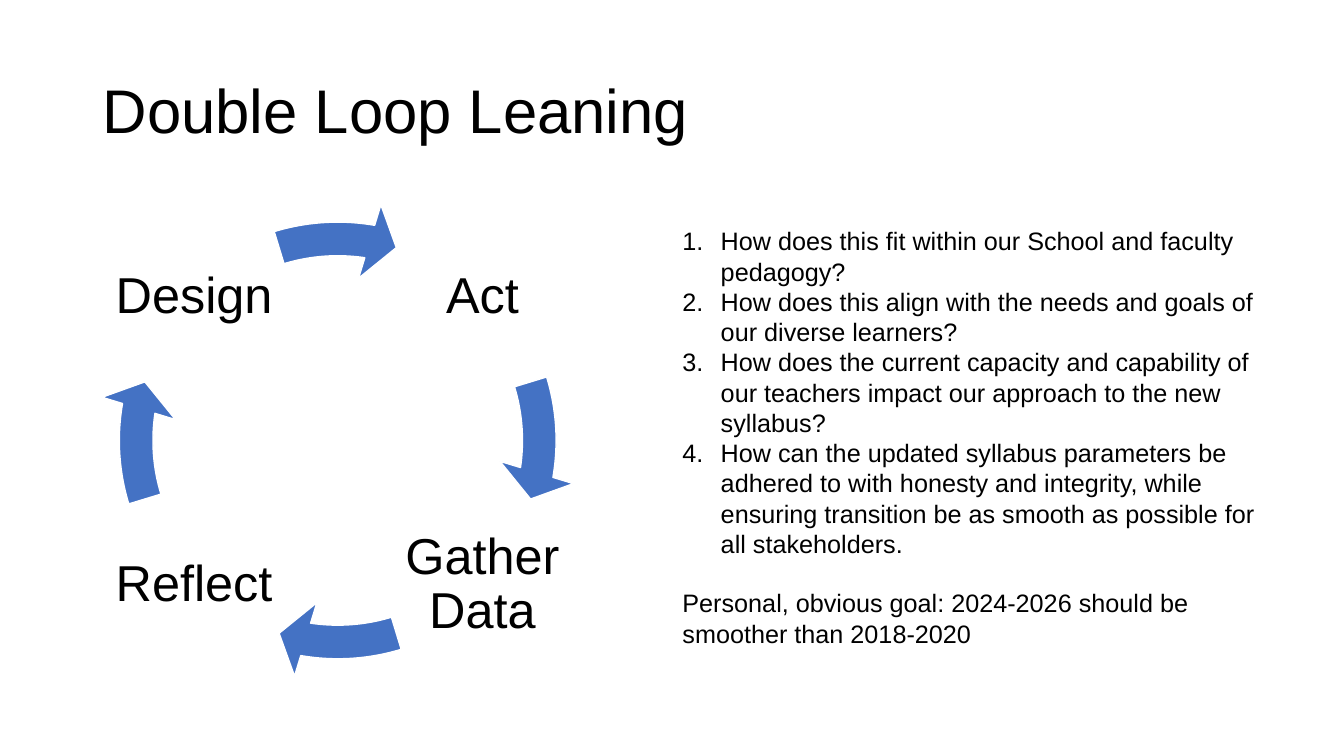
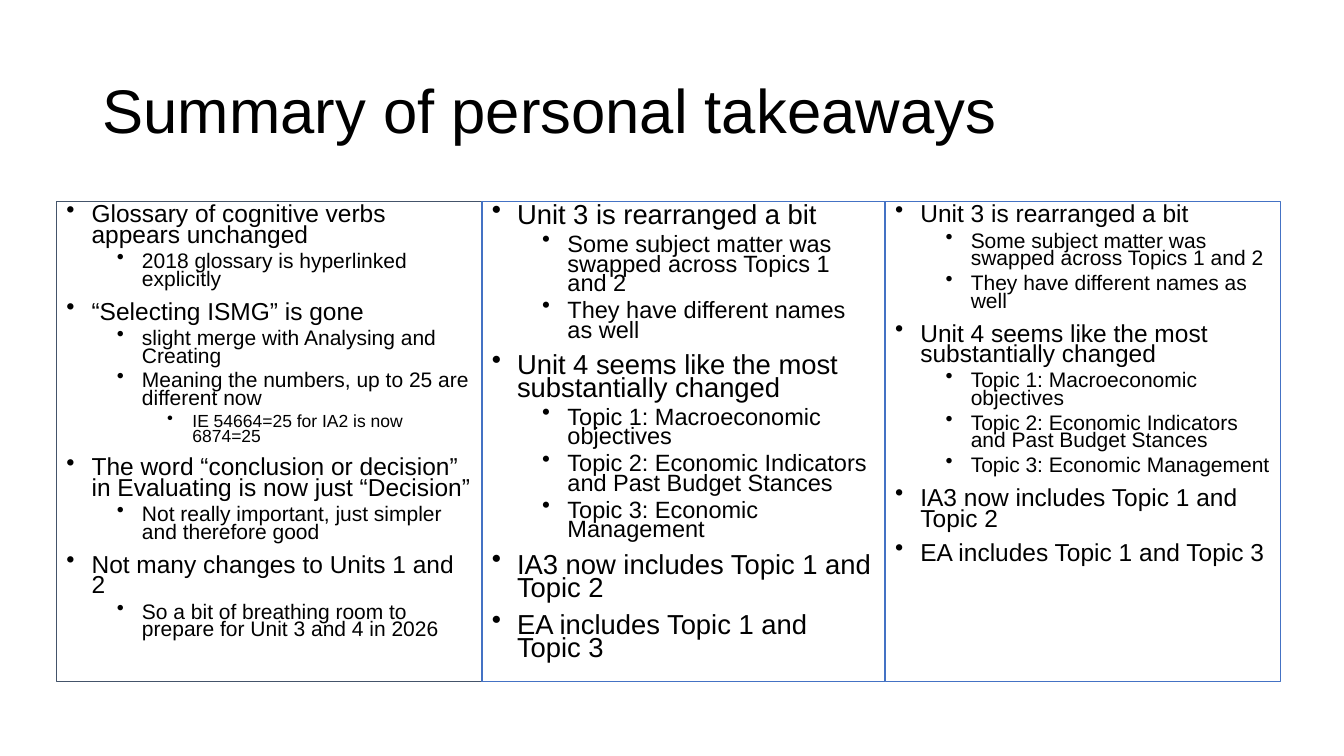
from dataclasses import dataclass
from itertools import accumulate

from lxml import etree
from pptx import Presentation
from pptx.dml.color import RGBColor
from pptx.enum.shapes import MSO_SHAPE
from pptx.enum.text import MSO_ANCHOR, PP_ALIGN
from pptx.oxml.ns import qn
from pptx.util import Inches, Pt

RECTANGLE = MSO_SHAPE.RECTANGLE
CIRCULAR_ARROW = MSO_SHAPE.CIRCULAR_ARROW
TOP, MIDDLE = MSO_ANCHOR.TOP, MSO_ANCHOR.MIDDLE
LEFT, CENTER = PP_ALIGN.LEFT, PP_ALIGN.CENTER


@dataclass(frozen=True)
class Theme:
    font: str = "Arial"
    ink: str = "000000"
    paper: str = "FFFFFF"
    accent: str = "4472C4"
    slate: str = "44546A"
    title: float = 44
    stage: float = 36
    body: float = 18
    outline: tuple = (28, 24, 20)  # full size of each outline level


THEME = Theme()
SLIDE_WIDTH, SLIDE_HEIGHT = 13.33, 7.5
TITLE_AREA = (0.92, 0.4, 11.5, 1.45)

# Slide 1: the loop runs clockwise from the upper right
LOOP_TITLE = "Double Loop Leaning"
STAGES = [("Act", 1, 0), ("Gather Data", 1, 1), ("Reflect", 0, 1), ("Design", 0, 0)]
STAGE_ORIGIN, STAGE_STEP, STAGE_SIZE = (1.08, 2.1), 2.86, 1.69
LOOP_AREA = (0.97, 1.99, 4.76, 4.76)
ARROW_START, ARROW_END = 343.1, 9.14  # degrees, for the first arrow
ARROW_BAND, ARROW_POINT, ARROW_HEAD = 0.07, 7.76, 0.08
QUESTION_AREA = (6.67, 2.19, 5.91, 4.04)
QUESTIONS = [
    "How does this fit within our School and faculty pedagogy?",
    "How does this align with the needs and goals of our diverse learners?",
    "How does the current capacity and capability of our teachers impact our "
    "approach to the new syllabus?",
    "How can the updated syllabus parameters be adhered to with honesty and "
    "integrity, while ensuring transition be as smooth as possible for all stakeholders.",
]
GOAL = "Personal, obvious goal: 2024-2026 should be smoother than 2018-2020"

# Slide 2: (outline level, text)
SUMMARY_TITLE = "Summary of personal takeaways"
GENERAL_CHANGES = [
    (0, "Glossary of cognitive verbs appears unchanged"),
    (1, "2018 glossary is hyperlinked explicitly"),
    (0, "“Selecting ISMG” is gone"),
    (1, "slight merge with Analysing and Creating"),
    (1, "Meaning the numbers, up to 25 are different now"),
    (2, "IE 54664=25 for IA2 is now 6874=25"),
    (0, "The word “conclusion or decision” in Evaluating is now just “Decision”"),
    (1, "Not really important, just simpler and therefore good"),
    (0, "Not many changes to Units 1 and 2"),
    (1, "So a bit of breathing room to prepare for Unit 3 and 4 in 2026"),
]
UNIT_CHANGES = [
    (0, "Unit 3 is rearranged a bit"),
    (1, "Some subject matter was swapped across Topics 1 and 2"),
    (1, "They have different names as well"),
    (0, "Unit 4 seems like the most substantially changed"),
    (1, "Topic 1: Macroeconomic objectives"),
    (1, "Topic 2: Economic Indicators and Past Budget Stances"),
    (1, "Topic 3: Economic Management"),
    (0, "IA3 now includes Topic 1 and Topic 2"),
    (0, "EA includes Topic 1 and Topic 3"),
]
# items, column width, share of full text size, fill, line colour, line width
COLUMNS = [
    (GENERAL_CHANGES, 4.22, 0.625, None, THEME.slate, 0.75),
    (UNIT_CHANGES, 4.0, 0.7, THEME.paper, THEME.accent, 1),
    (UNIT_CHANGES, 3.92, 0.625, THEME.paper, THEME.accent, 1),
]
COLUMNS_LEFT, COLUMNS_TOP, COLUMNS_HEIGHT = 0.56, 2.0, 4.76


def add_text_box(page, area, anchor=TOP, inset=None):
    box = page.shapes.add_textbox(*map(Inches, area))
    frame = box.text_frame
    frame.word_wrap = True
    frame.vertical_anchor = anchor
    if inset is not None:
        frame.margin_left = frame.margin_right = Inches(inset)
        frame.margin_top = frame.margin_bottom = Inches(inset)
    return frame


def add_shape(page, kind, area, fill, line, line_width):
    shape = page.shapes.add_shape(kind, *map(Inches, area))
    shape.shadow.inherit = False
    if fill:
        shape.fill.solid()
        shape.fill.fore_color.rgb = RGBColor.from_string(fill)
    else:
        shape.fill.background()
    shape.line.color.rgb = RGBColor.from_string(line)
    shape.line.width = Pt(line_width)
    return shape


def write(frame, text, size, align=LEFT, spacing=1.0, before=0, marker=None, indent=0, hang=0):
    """Add a paragraph; marker is (element name, attributes) of its bullet."""
    first = not frame.text
    para = frame.paragraphs[0] if first else frame.add_paragraph()
    para.text = text
    para.alignment = align
    para.line_spacing = spacing
    para.space_before = Pt(0 if first else before)
    if marker:
        name, attributes = marker
        properties = para._p.get_or_add_pPr()
        properties.set("marL", str(Inches(indent)))
        properties.set("indent", str(-Inches(hang)))
        etree.SubElement(properties, qn(name), attributes)
    para.font.name = THEME.font
    para.font.size = Pt(size)
    para.font.color.rgb = RGBColor.from_string(THEME.ink)


def add_page(deck, title):
    page = deck.slides.add_slide(deck.slide_layouts[6])
    write(add_text_box(page, TITLE_AREA, MIDDLE), title, THEME.title, spacing=0.9)
    return page


def add_loop(page):
    left, top = STAGE_ORIGIN
    for index, (name, column, row) in enumerate(STAGES):
        area = (left + column * STAGE_STEP, top + row * STAGE_STEP, STAGE_SIZE, STAGE_SIZE)
        write(add_text_box(page, area, MIDDLE, 0.05), name, THEME.stage, CENTER, 0.9)

        # Each arrow is a quarter turn on from the last
        arrow = add_shape(page, CIRCULAR_ARROW, LOOP_AREA, THEME.accent, THEME.paper, 1)
        turn = index * 360 / len(STAGES)
        angles = (ARROW_POINT, (ARROW_END + turn) % 360, (ARROW_START + turn) % 360)
        values = (ARROW_BAND, *(angle * 0.6 for angle in angles), ARROW_HEAD)
        for position, value in enumerate(values):
            arrow.adjustments[position] = value


def add_questions(page):
    frame = add_text_box(page, QUESTION_AREA)
    numbered = ("a:buAutoNum", {"type": "arabicPeriod"})
    for question in QUESTIONS:
        write(frame, question, THEME.body, marker=numbered, indent=0.38, hang=0.38)
    write(frame, GOAL, THEME.body, before=21)


def add_columns(page):
    bullet = ("a:buChar", {"char": "•"})
    lefts = accumulate((column[1] for column in COLUMNS), initial=COLUMNS_LEFT)
    for left, (items, width, scale, fill, line, line_width) in zip(lefts, COLUMNS):
        area = (left, COLUMNS_TOP, width, COLUMNS_HEIGHT)
        frame = add_shape(page, RECTANGLE, area, fill, line, line_width).text_frame
        frame.word_wrap = True
        frame.vertical_anchor = TOP
        for level, text in items:
            write(frame, text, THEME.outline[level] * scale, spacing=0.7,
                  before=5 if level else 10, marker=bullet,
                  indent=0.25 + level * 0.5, hang=0.25)


def main():
    deck = Presentation()
    deck.slide_width, deck.slide_height = Inches(SLIDE_WIDTH), Inches(SLIDE_HEIGHT)

    loop_page = add_page(deck, LOOP_TITLE)
    add_loop(loop_page)
    add_questions(loop_page)

    add_columns(add_page(deck, SUMMARY_TITLE))
    deck.save("out.pptx")


if __name__ == "__main__":
    main()
